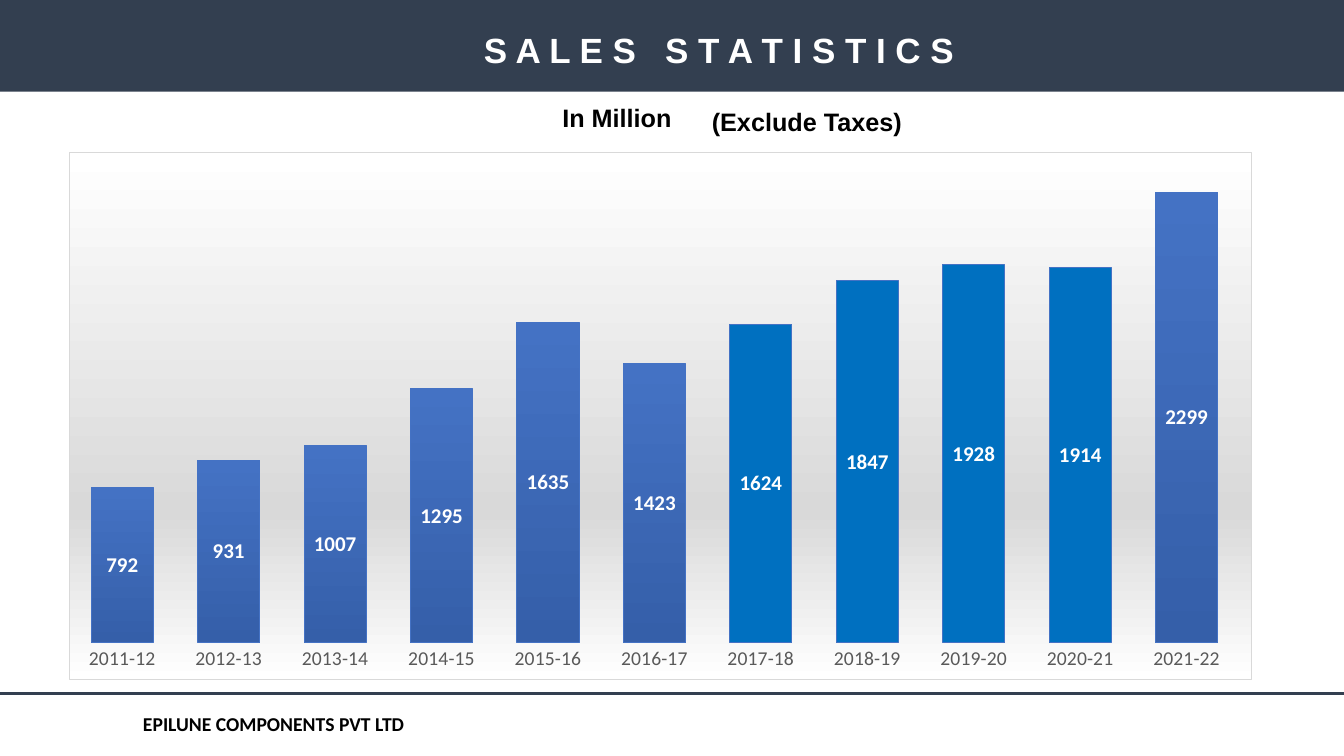
from lxml import etree
from pptx import Presentation, util as u
from pptx.chart.data import CategoryChartData
from pptx.dml.color import RGBColor
from pptx.enum import chart as ch, shapes, text
from pptx.oxml import parse_xml
from pptx.oxml.ns import nsdecls, qn

W, H = 13.33, 7.5
COLORS = {"navy": "333F50", "white": "FFFFFF", "black": "000000", "grey": "D9D9D9",
          "label": "595959", "blue": "4472C4", "deep": "355FA9", "bright": "0070C0"}

SALES = {"2011-12": 792, "2012-13": 931, "2013-14": 1007, "2014-15": 1295,
         "2015-16": 1635, "2016-17": 1423, "2017-18": 1624, "2018-19": 1847,
         "2019-20": 1928, "2020-21": 1914, "2021-22": 2299}
BRIGHT_YEARS = ("2017-18", "2018-19", "2019-20", "2020-21")
AREA_STOPS = [(0, "white"), (68, "grey"), (100, "white")]
BAR_STOPS = [(0, "blue"), (100, "deep")]
PLOT_SHARE = {"x": 0, "y": 0, "w": 0.99, "h": 0.93}

# text, box, size, font, colour, alignment, anchor
CENTER, LEFT = text.PP_ALIGN.CENTER, text.PP_ALIGN.LEFT
MIDDLE, TOP = text.MSO_ANCHOR.MIDDLE, text.MSO_ANCHOR.TOP
TEXTS = {
    "title": (" ".join("SALES STATISTICS"), (0.92, 0.19, 12.42, 0.66),
              25, "Arial", "white", CENTER, MIDDLE),
    "company": ("EPILUNE COMPONENTS PVT LTD", (1.16, 6.98, 3.11, 0.4),
                14, "Calibri", "black", CENTER, MIDDLE),
    "unit": ("In Million", (5.48, 0.97, 1.44, 0.4),
             18, "Arial", "black", LEFT, TOP),
    "taxes": ("(Exclude Taxes)", (7.06, 1.11, 2.02, 0.4),
              18, "Arial", "black", LEFT, TOP),
}


def rgb(name):
    return RGBColor.from_string(COLORS[name])


def inches(box):
    return [u.Inches(v) for v in box]


def add_text(slide, content, box, size, font, color, align, anchor):
    tf = slide.shapes.add_textbox(*inches(box)).text_frame
    tf.word_wrap = True
    tf.vertical_anchor = anchor
    tf.text = content
    p = tf.paragraphs[0]
    p.alignment = align
    f = p.runs[0].font
    f.size, f.name, f.bold = u.Pt(size), font, True
    f.color.rgb = rgb(color)
    return tf


def vertical_gradient(stops):
    gs = "".join(f'<a:gs pos="{pos * 1000}"><a:srgbClr val="{COLORS[c]}"/></a:gs>'
                 for pos, c in stops)
    return parse_xml(f'<a:gradFill {nsdecls("a")} rotWithShape="1"><a:gsLst>{gs}</a:gsLst>'
                     '<a:lin ang="5400000" scaled="0"/></a:gradFill>')


def style_chart_area(chart):
    sp_pr = parse_xml(f'<c:spPr {nsdecls("c", "a")}><a:ln w="9525"><a:solidFill>'
                      f'<a:srgbClr val="{COLORS["grey"]}"/></a:solidFill></a:ln></c:spPr>')
    sp_pr.insert(0, vertical_gradient(AREA_STOPS))
    chart.element.find(qn("c:chart")).addnext(sp_pr)


def place_plot(chart):
    plot_area = chart.element.find(qn("c:chart")).find(qn("c:plotArea"))
    for old in plot_area.findall(qn("c:layout")):
        plot_area.remove(old)
    layout = parse_xml(f'<c:layout {nsdecls("c")}><c:manualLayout/></c:layout>')
    settings = {"layoutTarget": "inner", "xMode": "edge", "yMode": "edge", **PLOT_SHARE}
    for tag, val in settings.items():
        etree.SubElement(layout[0], qn(f"c:{tag}")).set("val", str(val))
    plot_area.insert(0, layout)


def add_sales_chart(slide):
    data = CategoryChartData(number_format="0")
    data.categories = list(SALES)
    data.add_series("Series 1", list(SALES.values()))
    chart = slide.shapes.add_chart(ch.XL_CHART_TYPE.COLUMN_STACKED,
                                   *inches((0.68, 1.51, 11.74, 5.24)), data).chart
    chart.has_legend = chart.has_title = False
    chart.font.size, chart.font.name = u.Pt(10), "Calibri"
    chart.font.color.rgb = rgb("black")
    style_chart_area(chart)
    place_plot(chart)

    years, values = chart.category_axis, chart.value_axis
    years.major_tick_mark = ch.XL_TICK_MARK.NONE
    years.format.line.fill.background()
    f = years.tick_labels.font
    f.size, f.name = u.Pt(14), "Calibri"
    f.color.rgb = rgb("label")
    values.visible = values.has_major_gridlines = False
    values.minimum_scale, values.maximum_scale = 0, 2500

    plot = chart.plots[0]
    plot.gap_width, plot.overlap, plot.vary_by_categories = 71, 100, False
    plot.has_data_labels = True
    labels = plot.data_labels
    labels.show_value = True
    labels.number_format, labels.number_format_is_linked = "0", False
    labels.position = ch.XL_LABEL_POSITION.CENTER
    f = labels.font
    f.size, f.bold, f.name = u.Pt(15), True, "Calibri"
    f.color.rgb = rgb("white")

    bars = plot.series[0]
    bright = [bars.points[i].format for i, year in enumerate(SALES) if year in BRIGHT_YEARS]
    for fmt in bright:
        fmt.fill.solid()
        fmt.fill.fore_color.rgb = rgb("bright")
    for fmt in [bars.format, *bright]:
        fmt.line.color.rgb = rgb("blue")
        fmt.line.width = u.Pt(0.75)
    bars.format.line.fill.fore_color.rgb = rgb("blue")
    bars._element.get_or_add_spPr().insert(0, vertical_gradient(BAR_STOPS))


def main():
    prs = Presentation()
    prs.slide_width, prs.slide_height = u.Inches(W), u.Inches(H)
    s = prs.slides.add_slide(prs.slide_layouts[6])

    banner = s.shapes.add_shape(shapes.MSO_SHAPE.RECTANGLE, *inches((0, 0, W, 0.91)))
    banner.shadow.inherit = False
    banner.fill.solid()
    banner.fill.fore_color.rgb = rgb("navy")
    banner.line.fill.background()

    rule = s.shapes.add_connector(shapes.MSO_CONNECTOR.STRAIGHT, *inches((0, 6.88, W, 6.88)))
    rule.line.color.rgb, rule.line.width = rgb("navy"), u.Pt(2.25)
    etree.SubElement(rule._element.spPr, qn("a:effectLst"))

    frames = {name: add_text(s, *item) for name, item in TEXTS.items()}
    frames["title"].paragraphs[0].line_spacing = 0.9
    frames["unit"].word_wrap = False
    taxes = frames["taxes"]
    taxes.margin_left = taxes.margin_right = taxes.margin_top = taxes.margin_bottom = 0
    taxes.paragraphs[0].line_spacing = u.Pt(17.3)

    add_sales_chart(s)
    prs.save("out.pptx")


if __name__ == "__main__":
    main()
